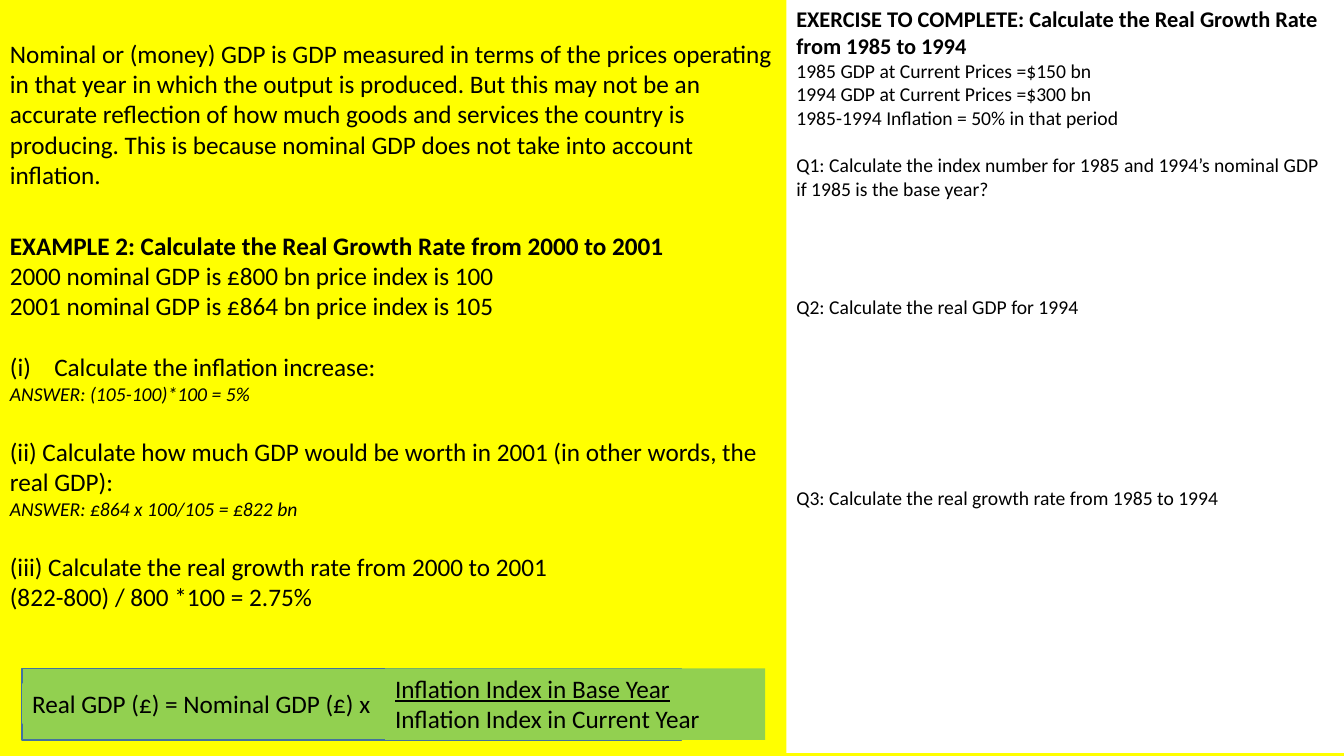
from lxml import etree
from pptx import Presentation
from pptx.dml.color import RGBColor
from pptx.enum import shapes, text
from pptx.oxml import ns
from pptx.util import Inches, Pt

YELLOW = RGBColor(0xFF, 0xFF, 0x00)
GREEN = RGBColor(0x92, 0xD0, 0x50)
BLUE = RGBColor(0x43, 0x73, 0x9E)
WHITE = RGBColor(0xFF, 0xFF, 0xFF)
BLACK = RGBColor(0x00, 0x00, 0x00)
FONT = "Calibri"

# Paragraphs: (wording, size, style letters, points of space before)
# Styles: b bold, i italic, u underlined, n numbered (i), (ii), ...
EXAMPLE = [
    ("Nominal or (money) GDP is GDP measured in terms of the prices operating in that "
     "year in which the output is produced. But this may not be an accurate reflection "
     "of how much goods and services the country is producing. This is because nominal "
     "GDP does not take into account inflation.", 18, "", 0),
    ("EXAMPLE 2: Calculate the Real Growth Rate from 2000 to 2001", 18, "b", 29),
    ("2000 nominal GDP is £800 bn price index is 100", 18, "", 0),
    ("2001 nominal GDP is £864 bn price index is 105", 18, "", 0),
    ("Calculate the inflation increase:", 18, "n", 22),
    ("ANSWER: (105-100)*100 = 5%", 14, "i", 0),
    ("(ii) Calculate how much GDP would be worth in 2001 (in other words, the real GDP):",
     18, "", 22),
    ("ANSWER: £864 x 100/105 = £822 bn", 14, "i", 0),
    ("(iii) Calculate the real growth rate from 2000 to 2001", 18, "", 22),
    ("(822-800) / 800 *100 = 2.75%", 18, "", 0),
]
FORMULA_LEFT = [("Real GDP (£) = Nominal GDP (£) x", 18, "", 0)]
FORMULA_FRACTION = [
    ("Inflation Index in Base Year", 18, "u", 0),
    ("Inflation Index in Current Year", 18, "", 0),
]
EXERCISE = [
    ("EXERCISE TO COMPLETE: Calculate the Real Growth Rate from 1985 to 1994", 16, "b", 0),
    ("1985 GDP at Current Prices =$150 bn", 14, "", 0),
    ("1994 GDP at Current Prices =$300 bn", 14, "", 0),
    ("1985-1994 Inflation = 50% in that period", 14, "", 0),
    ("Q1: Calculate the index number for 1985 and 1994’s nominal GDP if 1985 is the "
     "base year?", 14, "", 17),
    ("Q2: Calculate the real GDP for 1994", 14, "", 68),
    ("Q3: Calculate the real growth rate from 1985 to 1994", 14, "", 119.5),
]

# Panels, back to front: (left, top, width, height), fill, line, paragraphs, wrap
PANELS = [
    ((0.22, 6.63, 6.54, 0.71), GREEN, BLUE, [], True),
    ((0, 0.33, 7.8, 5.82), None, None, EXAMPLE, True),
    ((0.22, 6.78, 3.74, 0.4), GREEN, None, FORMULA_LEFT, False),
    ((3.82, 6.63, 3.77, 0.71), GREEN, None, FORMULA_FRACTION, True),
    ((7.8, 0, 5.53, 7.47), WHITE, None, EXERCISE, True),
]


def number_roman(paragraph):
    """Give the paragraph a hanging (i) number."""
    props = paragraph._p.get_or_add_pPr()
    props.set("marL", str(Inches(0.44)))
    props.set("indent", str(-Inches(0.44)))
    etree.SubElement(props, ns.qn("a:buAutoNum"), type="romanLcParenBoth")


def write(frame, paragraphs):
    for index, (wording, size, style, before) in enumerate(paragraphs):
        paragraph = frame.paragraphs[0] if index == 0 else frame.add_paragraph()
        paragraph.text = wording
        paragraph.alignment = text.PP_ALIGN.LEFT
        paragraph.space_before = Pt(before)
        if "n" in style:
            number_roman(paragraph)
        font = paragraph.runs[0].font
        font.name, font.size = FONT, Pt(size)
        font.color.rgb = BLACK
        font.bold, font.italic, font.underline = (key in style for key in "biu")


def add_panel(slide, box, fill, line, paragraphs, wrap):
    place = [Inches(value) for value in box]
    if fill is None:
        panel = slide.shapes.add_textbox(*place)
    else:
        panel = slide.shapes.add_shape(shapes.MSO_SHAPE.RECTANGLE, *place)
        panel.shadow.inherit = False
        panel.fill.solid()
        panel.fill.fore_color.rgb = fill
        if line is None:
            panel.line.fill.background()
        else:
            panel.line.color.rgb = line
            panel.line.width = Pt(1)
    frame = panel.text_frame
    frame.word_wrap = wrap
    frame.vertical_anchor = text.MSO_ANCHOR.TOP
    write(frame, paragraphs)


def main():
    deck = Presentation()
    deck.slide_width, deck.slide_height = Inches(13.33), Inches(7.5)
    slide = deck.slides.add_slide(deck.slide_layouts[6])
    slide.background.fill.solid()
    slide.background.fill.fore_color.rgb = YELLOW
    for panel in PANELS:
        add_panel(slide, *panel)
    deck.save("out.pptx")


if __name__ == "__main__":
    main()
